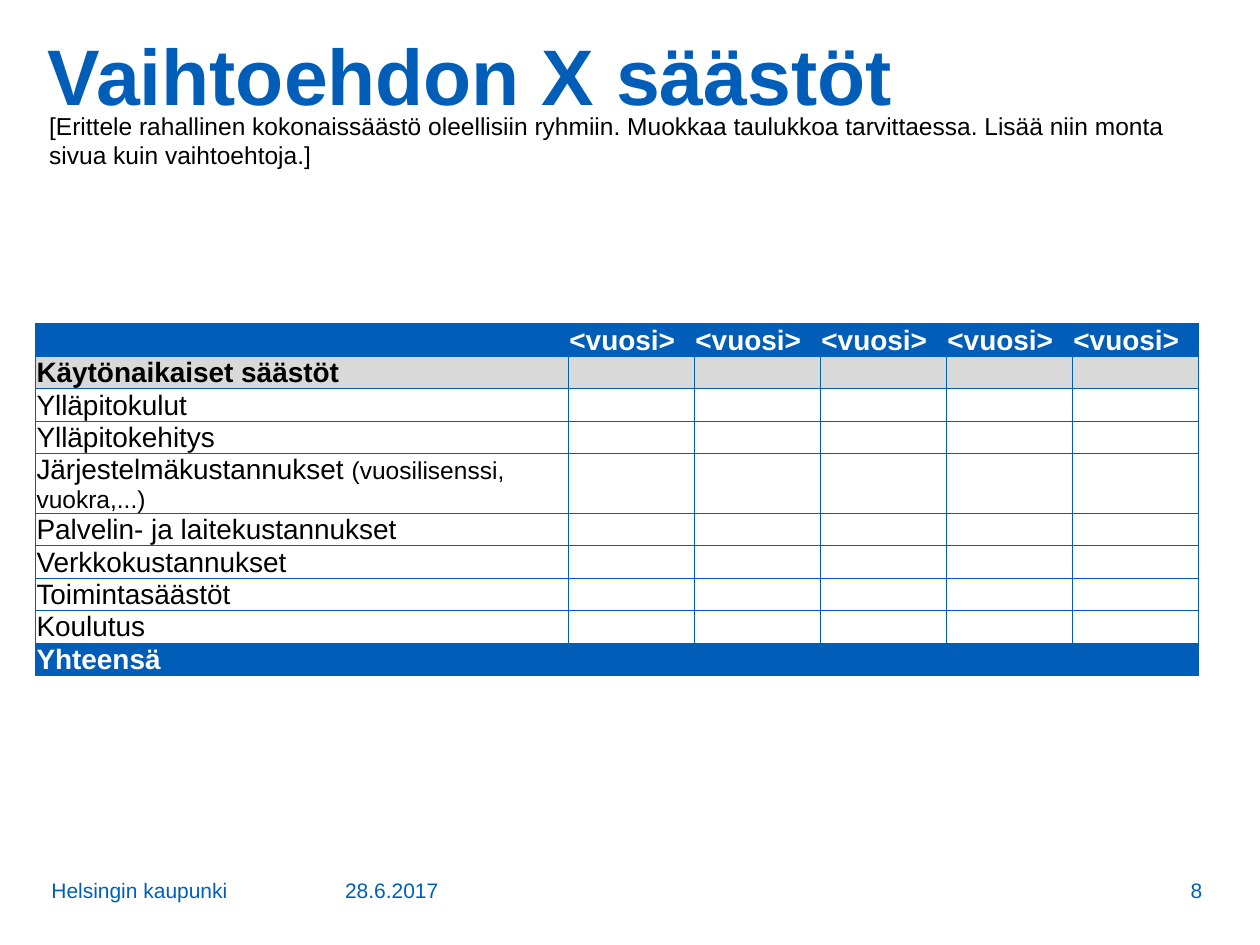
from lxml.etree import SubElement
from pptx import Presentation
from pptx.dml.color import RGBColor as Rgb
from pptx.enum.text import MSO_ANCHOR as Anchor, MSO_AUTO_SIZE as AutoSize, PP_ALIGN as Align
from pptx.oxml.ns import qn
from pptx.util import Emu, Pt

COLORS = {"blue": "005EB8", "gray": "D9D9D9", "white": "FFFFFF", "black": "000000"}
YEARS = ["<vuosi>"] * 5
COSTS = [
    ["Ylläpitokulut"],
    ["Ylläpitokehitys"],
    ["Järjestelmäkustannukset ", "(vuosilisenssi, vuokra,...)"],
    ["Palvelin- ja laitekustannukset"],
    ["Verkkokustannukset"],
    ["Toimintasäästöt"],
    ["Koulutus"],
]


def px(count):
    """Turn px, one hundred to the inch, into EMU."""
    return Emu(count * 9144)


def style_font(font, size, color, bold=False):
    """Set the typeface, size, colour and weight of a font."""
    font.name, font.size, font.bold = "Arial", Pt(size), bold
    font.color.rgb = Rgb.from_string(COLORS[color])


def place(shape, box):
    """Move a shape to a box of left, top, width and height."""
    shape.left, shape.top, shape.width, shape.height = map(px, box)


def set_margins(item, left, top, right, bottom):
    """Set the insets of a text frame or table cell."""
    item.margin_left, item.margin_top = px(left), px(top)
    item.margin_right, item.margin_bottom = px(right), px(bottom)


def add_title(page, box):
    """Place and format the title placeholder."""
    title = page.shapes.title
    place(title, box)
    frame = title.text_frame
    frame.text = "Vaihtoehdon X säästöt"
    frame.auto_size, frame.vertical_anchor = AutoSize.NONE, Anchor.TOP
    set_margins(frame, 10, 8, 10, 5)
    para = frame.paragraphs[0]
    para.alignment, para.line_spacing = Align.LEFT, 0.85
    style_font(para.font, 45, "blue", True)


def add_text(page, box, text, size, color, anchor=Anchor.TOP, align=Align.LEFT):
    """Add a wrapping one-paragraph text box and return its frame."""
    frame = page.shapes.add_textbox(*map(px, box)).text_frame
    frame.word_wrap, frame.vertical_anchor = True, anchor
    para = frame.paragraphs[0]
    para.text, para.alignment = text, align
    style_font(para.font, size, color)
    return frame


def add_guidance(page, box):
    """Add the instruction below the title."""
    text = (
        "[Erittele rahallinen kokonaissäästö oleellisiin ryhmiin. Muokkaa taulukkoa "
        "tarvittaessa. Lisää niin monta sivua kuin vaihtoehtoja.]"
    )
    frame = add_text(page, box, text, 14, "black")
    set_margins(frame, 4, 4, 4, 4)


def add_borders(cell):
    """Draw thin blue lines on all four sides of a cell."""
    properties = cell._tc.get_or_add_tcPr()
    for index, side in enumerate(("a:lnL", "a:lnR", "a:lnT", "a:lnB")):
        line = properties.makeelement(qn(side), {"w": str(Pt(0.5))})
        fill = SubElement(line, qn("a:solidFill"))
        SubElement(fill, qn("a:srgbClr"), val=COLORS["blue"])
        properties.insert(index, line)


def fill_cell(cell, parts, fill, color, bold):
    """Write a cell whose second part, if any, is smaller."""
    set_margins(cell, 1, 1, 1, 0)
    cell.vertical_anchor = Anchor.BOTTOM
    cell.fill.solid()
    cell.fill.fore_color.rgb = Rgb.from_string(COLORS[fill])
    add_borders(cell)
    para = cell.text_frame.paragraphs[0]
    style_font(para.font, 16, color, bold)
    for index, part in enumerate(parts):
        span = para.add_run()
        span.text = part
        if index:
            span.font.size = Pt(14)


def add_savings_table(page, box):
    """Add the table of savings by cost group and year."""
    left, top, width, height = box
    rows = [([], "blue", "white", True), (["Käytönaikaiset säästöt"], "gray", "black", True)]
    rows += [(parts, "white", "black", False) for parts in COSTS]
    rows.append((["Yhteensä"], "blue", "white", True))
    table = page.shapes.add_table(len(rows), len(YEARS) + 1, *map(px, box)).table
    table.first_row = table.horz_banding = False
    year_width = 100
    for column in table.columns:
        column.width = px(year_width)
    table.columns[0].width = px(width - year_width * len(YEARS))
    for row_index, (label, *look) in enumerate(rows):
        for column_index, cell in enumerate(table.rows[row_index].cells):
            is_year = row_index == 0 and column_index > 0
            parts = label if column_index == 0 else [YEARS[column_index - 1]] if is_year else []
            fill_cell(cell, parts, *look)


def add_footer(page, box):
    """Add the organisation, date and page number on one baseline."""
    left, top, width, height = box
    entries = [
        (0, 233, "Helsingin kaupunki", Align.LEFT),
        (233, 155, "28.6.2017", Align.LEFT),
        (width - 118, 118, "8", Align.RIGHT),
    ]
    for offset, span_width, text, align in entries:
        part = (left + offset, top, span_width, height)
        add_text(page, part, text, 12, "blue", Anchor.BOTTOM, align)


def main():
    """Build and save the savings slide."""
    deck = Presentation()
    deck.slide_width, deck.slide_height = px(1000), px(750)
    page = deck.slides.add_slide(deck.slide_layouts[5])
    add_title(page, (28, 25, 922, 146))
    add_savings_table(page, (28, 257, 923, 250))
    add_footer(page, (31, 682, 933, 39))
    add_guidance(page, (35, 84, 921, 55))
    deck.save("out.pptx")


if __name__ == "__main__":
    main()
